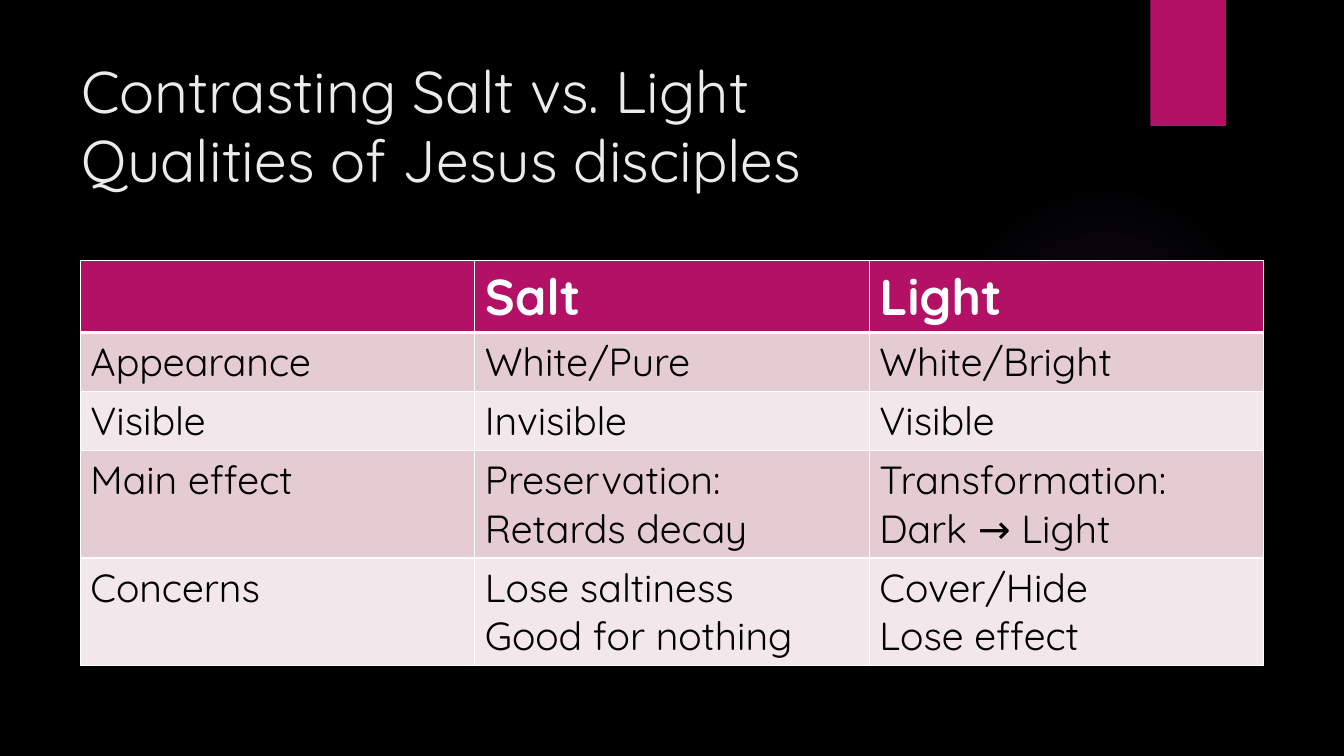
from dataclasses import dataclass

from lxml import etree
from pptx import Presentation
from pptx.dml.color import RGBColor
from pptx.enum.shapes import MSO_SHAPE
from pptx.enum.text import MSO_ANCHOR
from pptx.oxml import parse_xml
from pptx.oxml.ns import nsdecls, qn
from pptx.util import Pt

ELLIPSE = MSO_SHAPE.OVAL
RECTANGLE = MSO_SHAPE.RECTANGLE
MIDDLE = MSO_ANCHOR.MIDDLE


@dataclass(frozen=True)
class Theme:
    font: str = "Quicksand"
    background: str = "000000"
    accent: str = "B31166"
    glow: str = "9B6BF2"
    title: str = "EBEBEB"
    header_text: str = "FFFFFF"
    body_text: str = "000000"
    border: str = "FFFFFF"
    bands: tuple = ("E5CCD3", "F2E7EA")
    title_size: int = 42
    header_size: int = 36
    body_size: int = 28
    thin: int = 1
    thick: int = 3


THEME = Theme()

QUALITIES = [
    ("", "Salt", "Light"),
    ("Appearance", "White/Pure", "White/Bright"),
    ("Visible", "Invisible", "Visible"),
    ("Main effect", "Preservation: Retards decay", "Transformation:\nDark → Light"),
    ("Concerns", "Lose saltiness\nGood for nothing", "Cover/Hide\nLose effect"),
]
ROW_HEIGHTS = (51.5, 42, 42, 77, 77)
COLUMN_WIDTH = 281.8


def format_text(frame, size, color, bold=False):
    for paragraph in frame.paragraphs:
        for run in paragraph.runs:
            run.font.name = THEME.font
            run.font.size = Pt(size)
            run.font.bold = bold
            run.font.color.rgb = RGBColor.from_string(color)


def add_plain_shape(slide, kind, left, top, width, height, color):
    shape = slide.shapes.add_shape(kind, Pt(left), Pt(top), Pt(width), Pt(height))
    shape.shadow.inherit = False
    shape.fill.solid()
    shape.fill.fore_color.rgb = RGBColor.from_string(color)
    shape.line.fill.background()
    return shape


def add_glow(slide, left, top, diameter):
    glow = add_plain_shape(slide, ELLIPSE, left, top, diameter, diameter, THEME.glow)
    stops = "".join(
        f'<a:gs pos="{position * 1000}"><a:srgbClr val="{THEME.glow}">'
        f'<a:alpha val="{opacity * 1000}"/></a:srgbClr></a:gs>'
        for position, opacity in ((0, 7), (36, 6), (69, 0), (100, 0))
    )
    gradient = parse_xml(
        f'<a:gradFill {nsdecls("a")} rotWithShape="1"><a:gsLst>{stops}</a:gsLst>'
        '<a:path path="circle"><a:fillToRect l="50000" t="50000" r="50000" b="50000"/>'
        "</a:path></a:gradFill>"
    )
    properties = glow.element.spPr
    properties.replace(properties.find(qn("a:solidFill")), gradient)


def add_title(slide, text, left, top, width, height):
    frame = slide.shapes.add_textbox(Pt(left), Pt(top), Pt(width), Pt(height)).text_frame
    frame.word_wrap = True
    frame.vertical_anchor = MIDDLE
    heading = frame.paragraphs[0]
    heading.text = text
    heading.line_spacing = 0.97
    format_text(frame, THEME.title_size, THEME.title)


def set_borders(cell, top, bottom):
    properties = cell._tc.get_or_add_tcPr()
    widths = {"lnL": THEME.thin, "lnR": THEME.thin, "lnT": top, "lnB": bottom}
    # Border lines come before the fill
    for index, (side, width) in enumerate(widths.items()):
        line = etree.Element(qn(f"a:{side}"), w=str(Pt(width)))
        fill = etree.SubElement(line, qn("a:solidFill"))
        etree.SubElement(fill, qn("a:srgbClr"), val=THEME.border)
        properties.insert(index, line)


def style_cell(cell, row):
    is_header = row == 0
    color = THEME.accent if is_header else THEME.bands[(row - 1) % 2]
    cell.fill.solid()
    cell.fill.fore_color.rgb = RGBColor.from_string(color)
    set_borders(
        cell,
        top=THEME.thick if row == 1 else THEME.thin,
        bottom=THEME.thick if is_header else THEME.thin,
    )
    if is_header:
        format_text(cell.text_frame, THEME.header_size, THEME.header_text, bold=True)
    else:
        format_text(cell.text_frame, THEME.body_size, THEME.body_text)


def add_comparison(slide, rows, left, top):
    columns = len(rows[0])
    table = slide.shapes.add_table(
        len(rows), columns, Pt(left), Pt(top),
        Pt(COLUMN_WIDTH * columns), Pt(sum(ROW_HEIGHTS)),
    ).table
    for column in table.columns:
        column.width = Pt(COLUMN_WIDTH)
    for row, (height, texts) in enumerate(zip(ROW_HEIGHTS, rows)):
        table.rows[row].height = Pt(height)
        for column, text in enumerate(texts):
            cell = table.cell(row, column)
            if text:
                cell.text_frame.text = text
            style_cell(cell, row)


def main():
    deck = Presentation()
    deck.slide_width, deck.slide_height = Pt(960), Pt(540)
    slide = deck.slides.add_slide(deck.slide_layouts[6])
    slide.background.fill.solid()
    slide.background.fill.fore_color.rgb = RGBColor.from_string(THEME.background)

    # Backdrop: soft glow and corner tab
    add_glow(slide, 677.5, 131.8, 221.8)
    add_plain_shape(slide, RECTANGLE, 821.8, 0, 54, 90, THEME.accent)

    # Title and comparison table
    add_title(slide, "Contrasting Salt vs. Light\vQualities of Jesus disciples",
              51.1, 36, 740.9, 110.2)
    add_comparison(slide, QUALITIES, 57.4, 186.1)

    deck.save("out.pptx")


if __name__ == "__main__":
    main()
